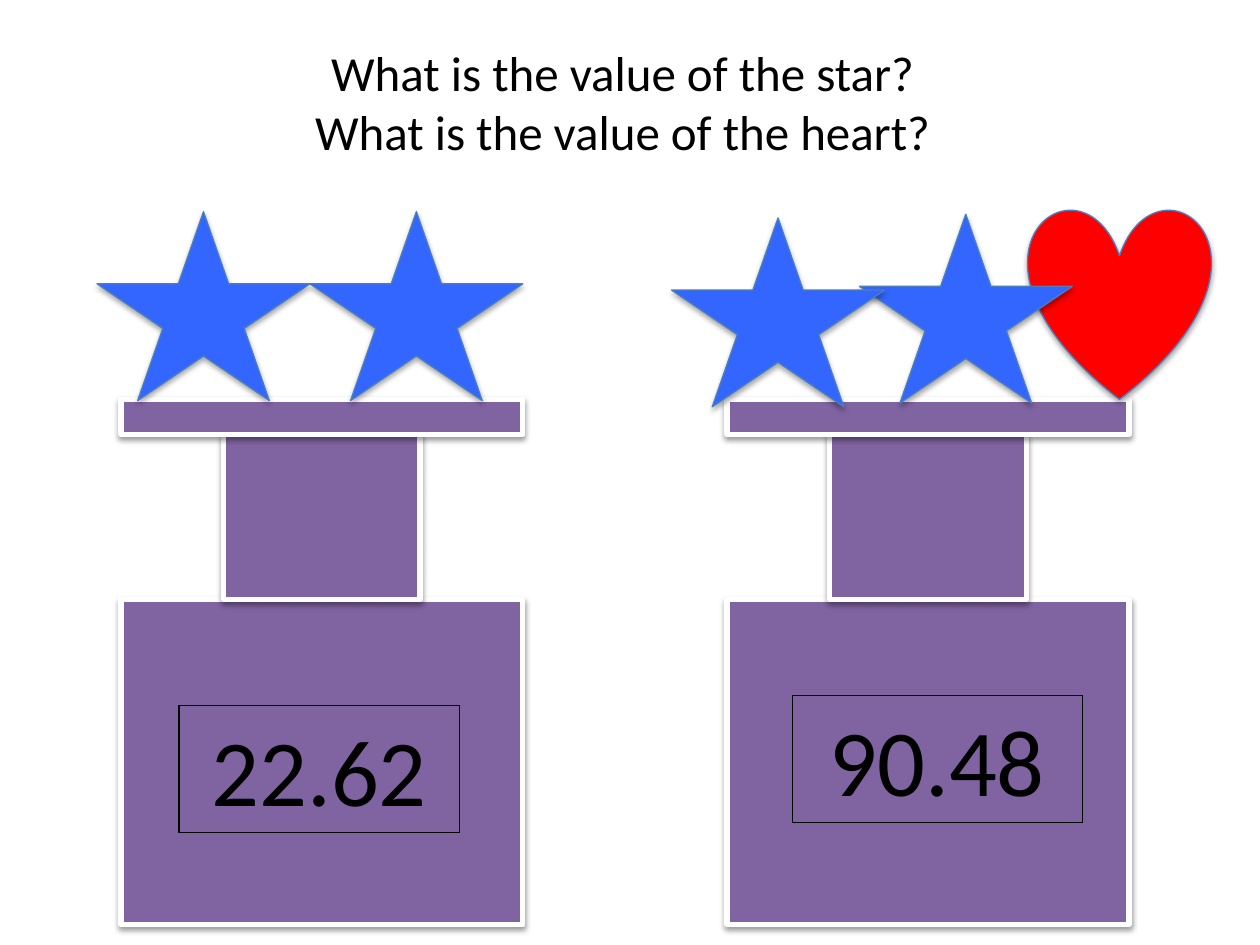
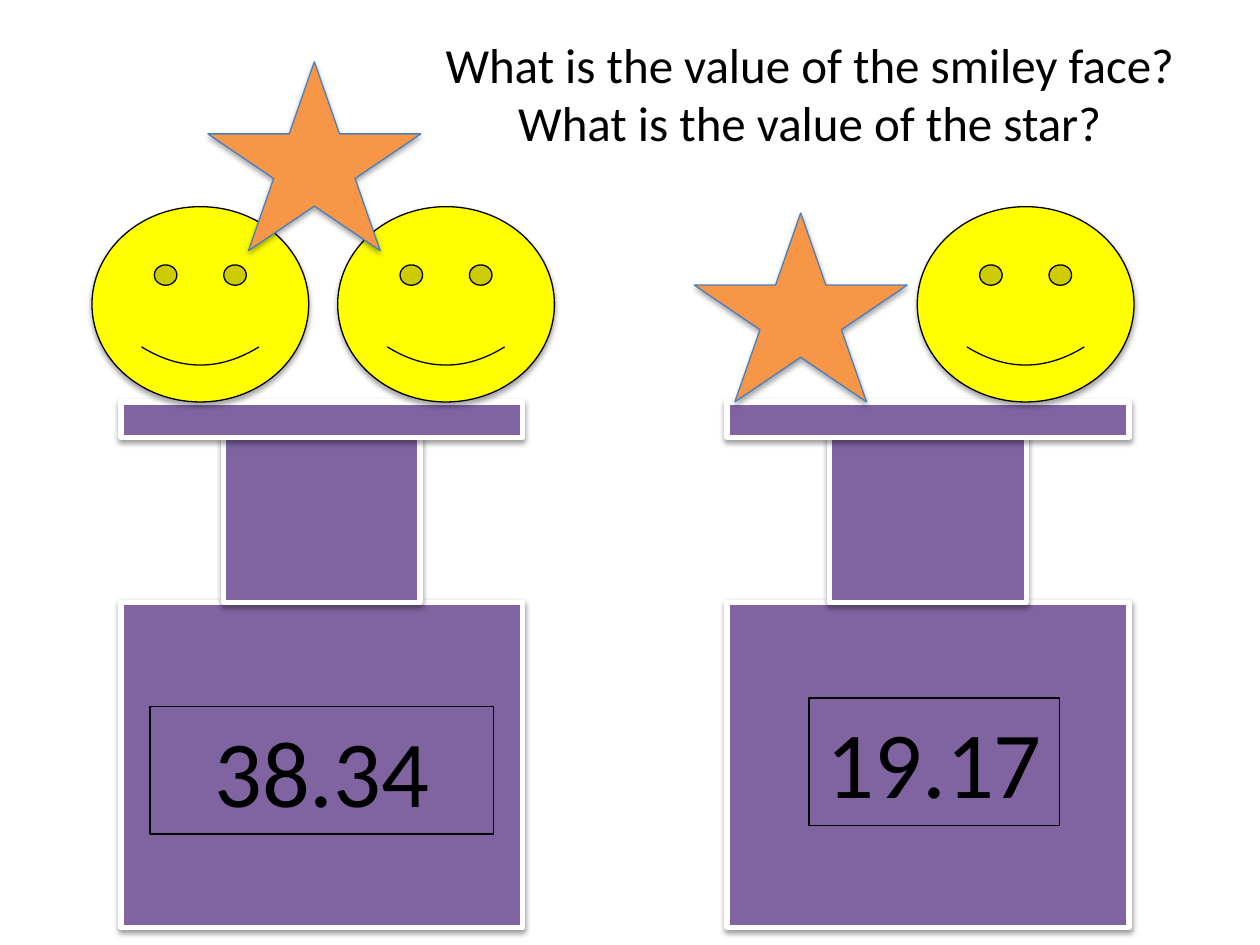
from lxml import etree
from pptx import Presentation
from pptx.dml.color import RGBColor
from pptx.enum.shapes import MSO_SHAPE as Preset
from pptx.enum.text import MSO_ANCHOR as Anchor, PP_ALIGN as Align
from pptx.oxml.ns import qn
from pptx.util import Inches, Pt

FONT = "Calibri"
BLACK, WHITE, PURPLE, OUTLINE = "000000", "FFFFFF", "8064A2", "4B7EBC"
BLUE, ORANGE, RED, YELLOW = "3366FF", "F79646", "FF0000", "FFFF00"
LEFT_SCALE, RIGHT_SCALE = 0.96, 5.77
PLATE_WIDTH = 3.19
STAR_SIZE, SMILEY_SIZE, HEART_SIZE = (1.69, 1.5), (1.72, 1.55), (1.45, 1.52)


def color(hex_code):
    return RGBColor.from_string(hex_code)


def write(frame, *lines, size=28, ink=BLACK, align=Align.CENTER, wrap=True):
    """Fill a text frame with one paragraph per line."""
    frame.word_wrap = wrap
    frame.vertical_anchor = Anchor.TOP
    for index, line in enumerate(lines):
        paragraph = frame.add_paragraph() if index else frame.paragraphs[0]
        paragraph.alignment = align
        run = paragraph.add_run()
        run.text = line
        run.font.name, run.font.size = FONT, Pt(size)
        run.font.color.rgb = color(ink)


class Puzzle:
    """Holds the shared style and the current slide."""

    def __init__(self, deck):
        self.deck = deck
        self.slide = None

    def start(self, *questions, box):
        self.slide = self.deck.slides.add_slide(self.deck.slide_layouts[5])
        title = self.slide.shapes.title
        title.left, title.top, title.width, title.height = map(Inches, box)
        write(title.text_frame, *questions, wrap=False)

    def shadow(self, shape, distance, opacity):
        shape.shadow.inherit = False
        effects = shape._element.spPr.find(qn("a:effectLst"))
        outer = etree.SubElement(effects, qn("a:outerShdw"), blurRad="40000",
                                 dist=str(Pt(distance)), dir="5400000", rotWithShape="0")
        tint = etree.SubElement(outer, qn("a:srgbClr"), val=BLACK)
        etree.SubElement(tint, qn("a:alpha"), val=str(opacity * 1000))

    def solid(self, preset, box, fill, line=OUTLINE, weight=0.75,
              distance=1.8, opacity=35, parent=None):
        shapes = (parent or self.slide).shapes
        shape = shapes.add_shape(preset, *map(Inches, box))
        self.shadow(shape, distance, opacity)
        shape.fill.solid()
        shape.fill.fore_color.rgb = color(fill)
        shape.line.color.rgb = color(line)
        shape.line.width = Pt(weight)

    def scale(self, left, top, reading, display):
        """Weighing scale: base, pillar and plate, with its reading."""
        group = self.slide.shapes.add_group_shape()
        pillar_top, base_top = top + 0.28, top + 1.59
        for box in ((left, base_top, PLATE_WIDTH, 2.58),
                    (left + 0.815, pillar_top, 1.56, 1.31),
                    (left, top, PLATE_WIDTH, 0.28)):
            self.solid(Preset.RECTANGLE, box, PURPLE, WHITE, 3, 1.6, 38, group)
        screen_left, screen_top, screen_width = display
        screen = group.shapes.add_textbox(
            *map(Inches, (screen_left, screen_top, screen_width, 1.01)))
        screen.line.color.rgb = color(BLACK)
        screen.line.width = Pt(0.75)
        write(screen.text_frame, reading, size=54)

    def star(self, left, top, fill):
        self.solid(Preset.STAR_5_POINT, (left, top, *STAR_SIZE), fill)

    def heart(self, left, top):
        self.solid(Preset.HEART, (left, top, *HEART_SIZE), RED)

    def smiley(self, left, top):
        self.solid(Preset.SMILEY_FACE, (left, top, *SMILEY_SIZE), YELLOW, BLACK)


def main():
    deck = Presentation()
    deck.slide_width, deck.slide_height = Inches(10), Inches(7.5)
    puzzle = Puzzle(deck)

    # Stars and heart
    puzzle.start("What is the value of the star?", "What is the value of the heart?",
                 box=(2.37, 0.29, 5.14, 1.04))
    puzzle.scale(RIGHT_SCALE, 3.17, "90.48", display=(6.29, 5.52, 2.3))
    puzzle.scale(LEFT_SCALE, 3.17, "22.62", display=(1.42, 5.6, 2.23))
    puzzle.heart(8.16, 1.65)
    for left, top in ((6.82, 1.7), (2.46, 1.68), (0.77, 1.68), (5.33, 1.73)):
        puzzle.star(left, top, BLUE)

    # Smiley faces and stars
    puzzle.start("What is the value of the smiley face?", "What is the value of the star?",
                 box=(3.39, 0.22, 6.07, 1.04))
    puzzle.scale(RIGHT_SCALE, 3.19, "19.17", display=(6.42, 5.54, 1.99))
    puzzle.scale(LEFT_SCALE, 3.19, "38.34", display=(1.19, 5.61, 2.73))
    for left in (7.28, 2.68, 0.73):
        puzzle.smiley(left, 1.64)
    for left, top in ((5.51, 1.69), (1.65, 0.49)):
        puzzle.star(left, top, ORANGE)

    deck.save("out.pptx")


if __name__ == "__main__":
    main()
